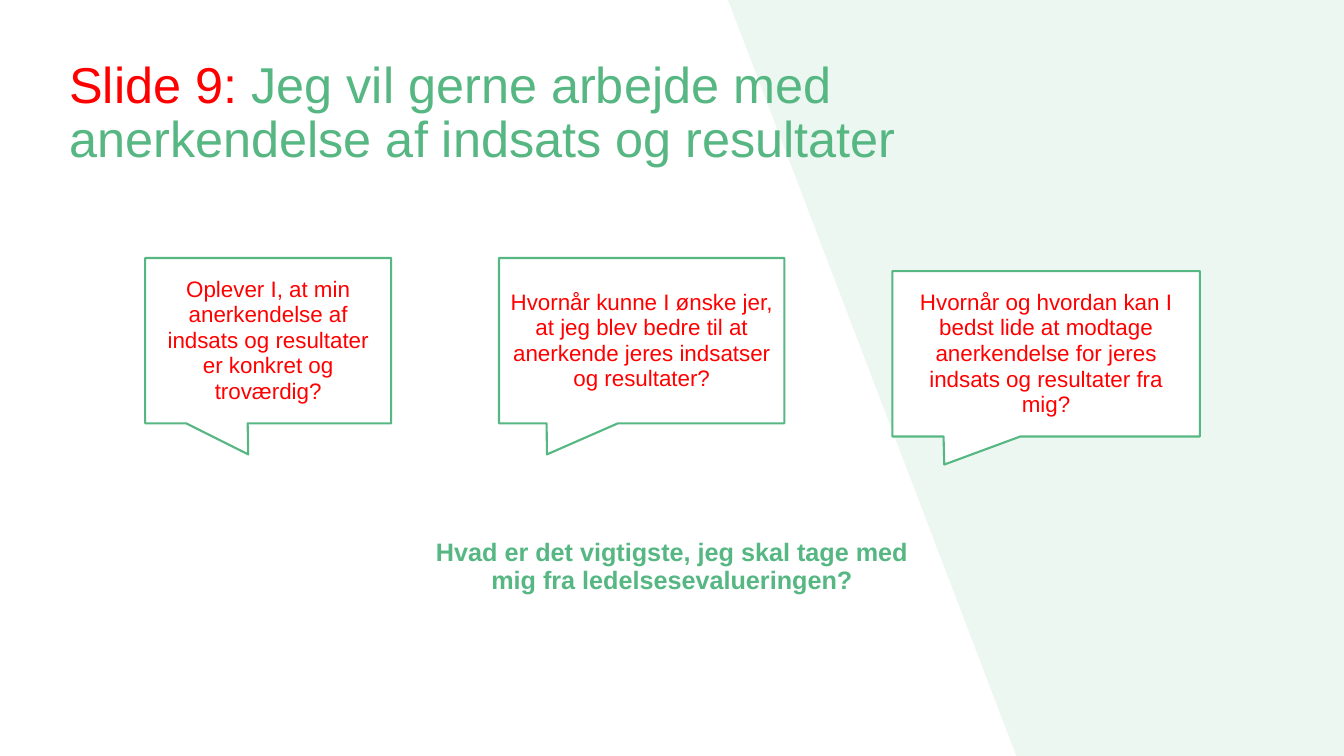
from lxml import etree
from pptx import Presentation
from pptx.dml.color import RGBColor
from pptx.enum.shapes import MSO_SHAPE
from pptx.enum.text import MSO_ANCHOR, PP_ALIGN
from pptx.oxml.ns import qn
from pptx.util import Inches, Pt

GREEN = RGBColor(0x56, 0xB7, 0x83)
RED = RGBColor(0xFF, 0x00, 0x00)
WHITE = RGBColor(0xFF, 0xFF, 0xFF)
CALLOUT = MSO_SHAPE.RECTANGULAR_CALLOUT
CENTER = PP_ALIGN.CENTER
LEFT = PP_ALIGN.LEFT
MIDDLE = MSO_ANCHOR.MIDDLE


def write(sp, runs, size, align, spacing, bold=False):
    tf = sp.text_frame
    tf.word_wrap = True
    p = tf.paragraphs[0]
    p.alignment = align
    p.line_spacing = spacing
    for text, color in runs:
        r = p.add_run()
        r.text = text
        r.font.name = "Arial"
        r.font.size = Pt(size)
        r.font.bold = bold
        r.font.color.rgb = color


prs = Presentation()
prs.slide_width = Inches(13.33)
prs.slide_height = Inches(7.5)
s = prs.slides.add_slide(prs.slide_layouts[6])

panel = s.shapes.build_freeform(Inches(7.22), 0)
panel.add_line_segments(
    [(Inches(x), Inches(y)) for x, y in [(10.08, 7.5), (13.33, 7.5), (13.33, 0)]],
    close=True)
sp = panel.convert_to_shape()
sp.shadow.inherit = False
sp.fill.solid()
sp.fill.fore_color.rgb = GREEN
sp.line.fill.background()
color = sp.fill._xPr.find(qn("a:solidFill"))[0]
etree.SubElement(color, qn("a:alpha")).set("val", "10000")

title = s.shapes.add_textbox(Inches(0.59), Inches(0.58), Inches(10.23), Inches(1.11))
title.text_frame.vertical_anchor = MIDDLE
write(title, [("Slide 9:", RED),
              (" Jeg vil gerne arbejde med anerkendelse af indsats og resultater", GREEN)],
      36, LEFT, 0.9)

callouts = [
    (1.44, 2.56, 2.44, -0.081, 0.688,
     "Oplever I, at min anerkendelse af indsats og resultater er konkret og troværdig?"),
    (4.95, 2.56, 2.83, -0.332, 0.688,
     "Hvornår kunne I ønske jer, at jeg blev bedre til at anerkende jeres indsatser og resultater?"),
    (8.85, 2.69, 3.05, -0.331, 0.67,
     "Hvornår og hvordan kan I bedst lide at modtage anerkendelse for jeres indsats og resultater fra mig?"),
]
for left, top, width, tip_x, tip_y, text in callouts:
    sp = s.shapes.add_shape(CALLOUT, Inches(left), Inches(top), Inches(width), Inches(1.64))
    sp.adjustments[0] = tip_x
    sp.adjustments[1] = tip_y
    sp.shadow.inherit = False
    sp.fill.solid()
    sp.fill.fore_color.rgb = WHITE
    sp.line.color.rgb = GREEN
    sp.line.width = Pt(1.5)
    sp.text_frame.vertical_anchor = MIDDLE
    write(sp, [(text, RED)], 16, CENTER, 0.95)

question = s.shapes.add_textbox(Inches(4.2), Inches(5.29), Inches(4.93), Inches(0.68))
write(question, [("Hvad er det vigtigste, jeg skal tage med mig fra ledelsesevalueringen?", GREEN)],
      18, CENTER, 0.95, bold=True)

prs.save("out.pptx")
